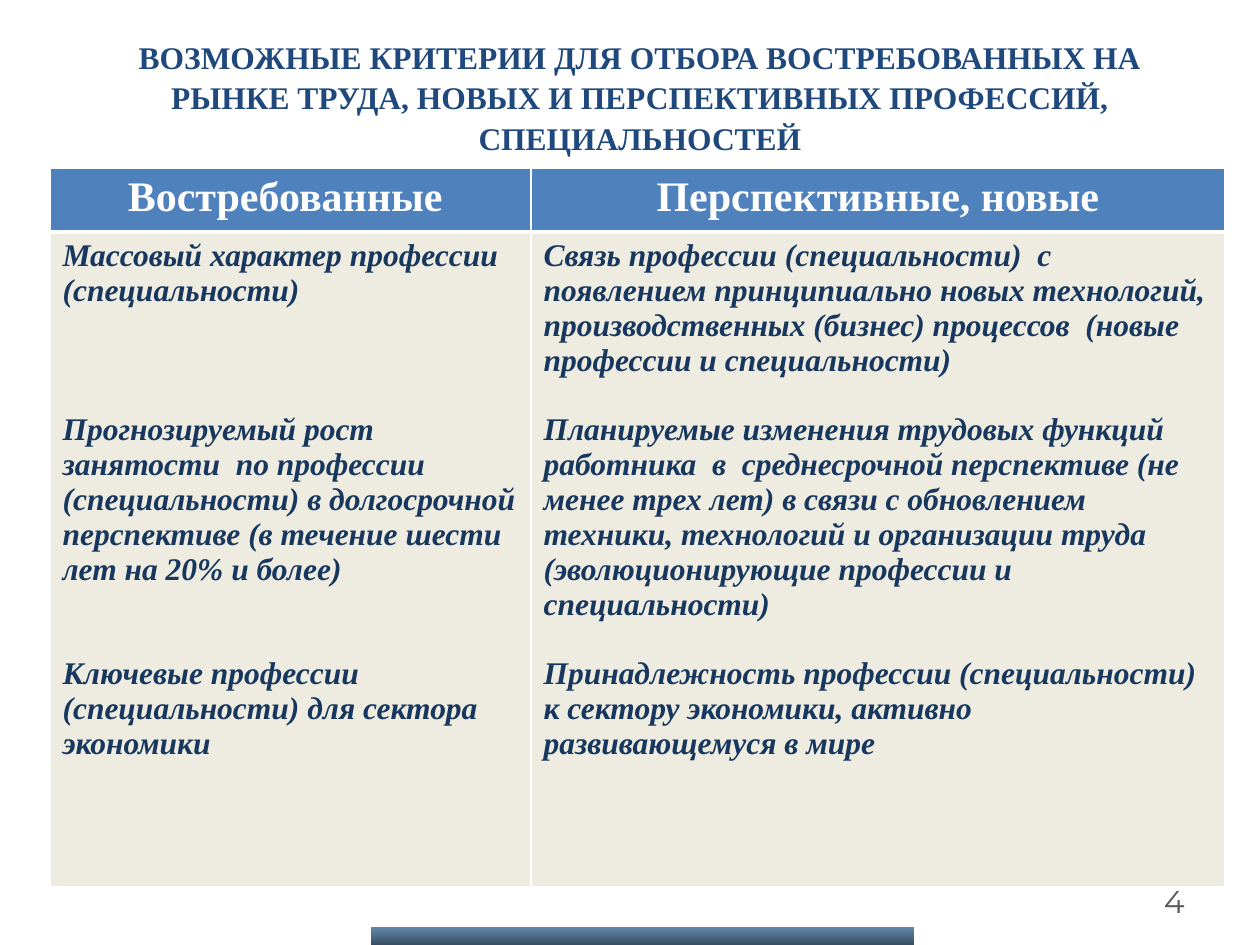
from lxml.etree import SubElement
from pptx import Presentation
from pptx.dml.color import RGBColor
from pptx.enum.shapes import MSO_SHAPE as Shape
from pptx.enum.text import MSO_ANCHOR as Anchor, PP_ALIGN as Align
from pptx.oxml import parse_xml
from pptx.oxml.ns import nsdecls, qn
from pptx.util import Pt

# Content
TITLE = ("ВОЗМОЖНЫЕ КРИТЕРИИ ДЛЯ ОТБОРА ВОСТРЕБОВАННЫХ НА РЫНКЕ ТРУДА, "
         "НОВЫХ И ПЕРСПЕКТИВНЫХ ПРОФЕССИЙ, СПЕЦИАЛЬНОСТЕЙ")
PAGE_NUMBER = "4"
# Each column: width in px, heading, criteria as (blank lines above, text)
COLUMNS = [
    (481, "Востребованные ", [
        (0, "Массовый характер профессии (специальности)"),
        (3, "Прогнозируемый рост занятости  по профессии (специальности) в "
            "долгосрочной перспективе (в течение шести лет на 20% и более)"),
        (2, "Ключевые профессии (специальности) для сектора экономики"),
    ]),
    (694, "Перспективные, новые", [
        (0, "Связь профессии (специальности)  с появлением принципиально новых "
            "технологий, производственных (бизнес) процессов  (новые профессии "
            "и специальности)"),
        (1, "Планируемые изменения трудовых функций работника  в  среднесрочной "
            "перспективе (не менее трех лет) в связи с обновлением техники, "
            "технологий и организации труда (эволюционирующие профессии и "
            "специальности)"),
        (1, "Принадлежность профессии (специальности) к сектору экономики, "
            "активно развивающемуся в мире"),
    ]),
]
ROW_HEIGHTS = [64, 655]
COLORS = {"title": "1F497D", "header": "4F81BD", "body": "EEECE1",
          "text": "17375E", "white": "FFFFFF", "number": "595959"}
BAR_STOPS = [("003C73", 60), ("001C35", 80)]  # colour, opacity in percent
SERIF, SANS = "Times New Roman", "Montserrat"
LINE_PT = 19.9  # height of one body line
PX = 914400 // 126


def px(*lengths):
    return [length * PX for length in lengths]


def write(para, text, color, size=18, font=SERIF, bold=True, italic=False,
          align=Align.LEFT, before=0, spacing=None):
    para.alignment = align
    para.space_before = Pt(before)
    if spacing:
        para.line_spacing = spacing
    span = para.add_run()
    span.text = text
    span.font.name, span.font.size = font, Pt(size)
    span.font.bold, span.font.italic = bold, italic
    span.font.color.rgb = RGBColor.from_string(COLORS[color])


def add_text(box, text, color, anchor=Anchor.TOP, **style):
    frame = page.shapes.add_textbox(*px(*box)).text_frame
    frame.word_wrap = True
    frame.vertical_anchor = anchor
    write(frame.paragraphs[0], text, color, **style)


def style_cell(cell, fill, top=1, bottom=1):
    cell.fill.solid()
    cell.fill.fore_color.rgb = RGBColor.from_string(COLORS[fill])
    sides = [("L", 1), ("R", 1), ("T", top), ("B", bottom)]
    for index, (side, width) in enumerate(sides):
        # Borders must come before the fill
        cell._tc.get_or_add_tcPr().insert(index, parse_xml(
            f'<a:ln{side} {nsdecls("a")} w="{Pt(width)}"><a:solidFill>'
            f'<a:srgbClr val="{COLORS["white"]}"/></a:solidFill></a:ln{side}>'))


deck = Presentation()
deck.slide_width, deck.slide_height = px(1260, 945)
page = deck.slides.add_slide(deck.slide_layouts[6])

# Title
add_text((69, 29, 1142, 127), TITLE, "title", align=Align.CENTER, spacing=1.07)

# Criteria table
table_width = sum(column[0] for column in COLUMNS)
table = page.shapes.add_table(
    len(ROW_HEIGHTS), len(COLUMNS),
    *px(50, 168, table_width, sum(ROW_HEIGHTS))).table
for row, height in zip(table.rows, ROW_HEIGHTS):
    row.height = height * PX
for index, (width, heading, criteria) in enumerate(COLUMNS):
    table.columns[index].width = width * PX
    head, body = table.cell(0, index), table.cell(1, index)
    style_cell(head, "header", bottom=3)
    style_cell(body, "body", top=3)
    write(head.text_frame.paragraphs[0], heading, "white", size=24,
          align=Align.CENTER)
    for number, (blank_lines, text) in enumerate(criteria):
        frame = body.text_frame
        para = frame.add_paragraph() if number else frame.paragraphs[0]
        write(para, text, "text", italic=True, before=blank_lines * LINE_PT)

# Bottom bar with a translucent gradient
bar = page.shapes.add_shape(Shape.RECTANGLE, *px(372, 928, 542, 17))
bar.shadow.inherit = False
bar.line.fill.background()
bar.fill.gradient()
bar.fill.gradient_angle = 270
for stop, (color, _) in zip(bar.fill.gradient_stops, BAR_STOPS):
    stop.color.rgb = RGBColor.from_string(color)
for node, (_, opacity) in zip(bar._element.spPr.iter(qn("a:srgbClr")), BAR_STOPS):
    SubElement(node, qn("a:alpha"), val=str(opacity * 1000))

# Page number
add_text((903, 876, 294, 50), PAGE_NUMBER, "number", anchor=Anchor.MIDDLE,
         font=SANS, bold=False, align=Align.RIGHT)

deck.save("out.pptx")
